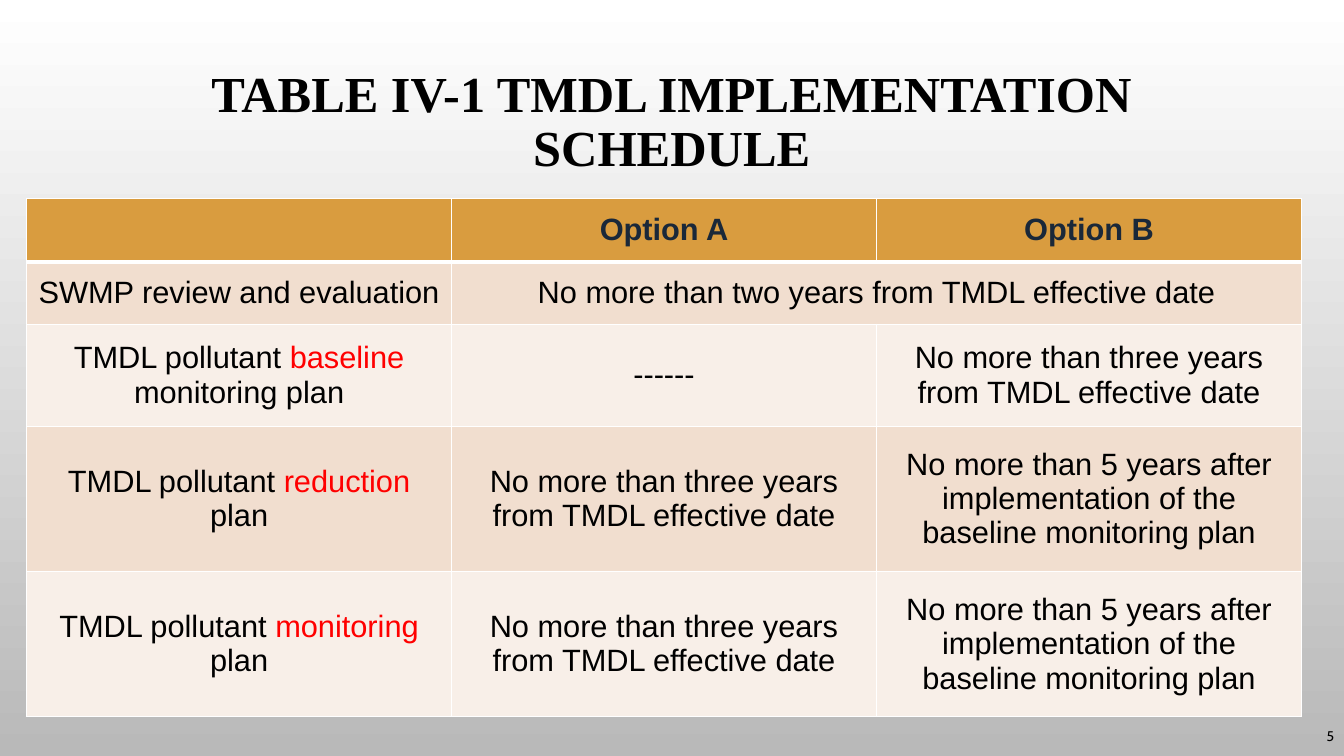
from lxml import etree
from pptx import Presentation
from pptx.dml.color import RGBColor
from pptx.enum.text import MSO_ANCHOR, PP_ALIGN
from pptx.oxml.ns import qn
from pptx.util import Cm, Pt

CENTER, RIGHT = PP_ALIGN.CENTER, PP_ALIGN.RIGHT
MIDDLE = MSO_ANCHOR.MIDDLE

# Content: a cell is a list of spans, "*" marks a highlighted span
TITLE = "TABLE IV-1 TMDL IMPLEMENTATION SCHEDULE"
PAGE_NUMBER = "5"
THREE_YEARS = ["No more than three years from TMDL effective date"]
FIVE_YEARS = ["No more than 5 years after implementation of the baseline monitoring plan"]
ROWS = [
    [[], ["Option A"], ["Option B"]],
    [["SWMP review and evaluation"], ["No more than two years from TMDL effective date"], []],
    [["TMDL pollutant ", "*baseline", " monitoring plan"], ["------"], THREE_YEARS],
    [["TMDL pollutant ", "*reduction", " plan"], THREE_YEARS, FIVE_YEARS],
    [["TMDL pollutant ", "*monitoring", " plan"], THREE_YEARS, FIVE_YEARS],
]

# Layout in centimetres
TABLE_LEFT, TABLE_TOP, COLUMN_WIDTH = 0.67, 5.0, 10.71
ROW_HEIGHTS = [1.6, 1.57, 2.57, 3.66, 3.66]

# Colours
BLACK, WHITE, RED, NAVY = "000000", "FFFFFF", "FF0000", "1A2839"
HEADER_FILL, BAND_FILLS = "D99C3F", ["F8EFE8", "F1DECF"]
BACKGROUND = [WHITE, "B9B9B9"]


def colour(value):
    return RGBColor.from_string(value)


def style(span, size, font, value, bold=False):
    span.font.size, span.font.name, span.font.bold = Pt(size), font, bold
    span.font.color.rgb = colour(value)


def add_text(page, bounds, text, align, *look):
    box = page.shapes.add_textbox(*[Cm(length) for length in bounds])
    frame = box.text_frame
    frame.word_wrap, frame.vertical_anchor = True, MIDDLE
    frame.text = text
    para = frame.paragraphs[0]
    para.alignment = align
    style(para.runs[0], *look)
    return para


def add_borders(cell, widths):
    properties = cell._tc.get_or_add_tcPr()
    for position, (side, width) in enumerate(widths.items()):
        line = etree.Element(qn("a:" + side), w=str(Pt(width)))
        fill = etree.SubElement(line, qn("a:solidFill"))
        etree.SubElement(fill, qn("a:srgbClr"), val=WHITE)
        properties.insert(position, line)


def fill_cell(cell, spans, row):
    header = row == 0
    cell.vertical_anchor = MIDDLE
    cell.fill.solid()
    cell.fill.fore_color.rgb = colour(HEADER_FILL if header else BAND_FILLS[row % 2])
    add_borders(cell, {"lnL": 1, "lnR": 1, "lnT": 3 if row == 1 else 1,
                       "lnB": 3 if header else 1})
    para = cell.text_frame.paragraphs[0]
    para.alignment = CENTER
    for text in spans:
        span = para.add_run()
        span.text = text.lstrip("*")
        value = NAVY if header else RED if text.startswith("*") else BLACK
        style(span, 22, "Arial", value, header)


def main():
    deck = Presentation()
    deck.slide_width, deck.slide_height = Cm(33.87), Cm(19.05)
    page = deck.slides.add_slide(deck.slide_layouts[6])

    # Background, light at the top
    fill = page.background.fill
    fill.gradient()
    fill.gradient_angle = 270
    for stop, value in zip(fill.gradient_stops, BACKGROUND):
        stop.color.rgb = colour(value)

    # Title
    title = add_text(page, (2.54, 1.5, 28.78, 3.2), TITLE, CENTER,
                     36, "Times New Roman", BLACK, True)
    title.line_spacing = 0.9

    # Schedule table
    columns = len(ROWS[0])
    schedule = page.shapes.add_table(
        len(ROWS), columns, Cm(TABLE_LEFT), Cm(TABLE_TOP),
        Cm(COLUMN_WIDTH * columns), Cm(sum(ROW_HEIGHTS))).table
    for column in schedule.columns:
        column.width = Cm(COLUMN_WIDTH)
    for row, cells in enumerate(ROWS):
        schedule.rows[row].height = Cm(ROW_HEIGHTS[row])
        for column, spans in enumerate(cells):
            fill_cell(schedule.cell(row, column), spans, row)
    schedule.cell(1, 1).merge(schedule.cell(1, 2))

    # Page number
    add_text(page, (31.75, 18.03, 2.12, 1.02), PAGE_NUMBER, RIGHT, 10, "Cabin", BLACK)

    deck.save("out.pptx")


if __name__ == "__main__":
    main()
